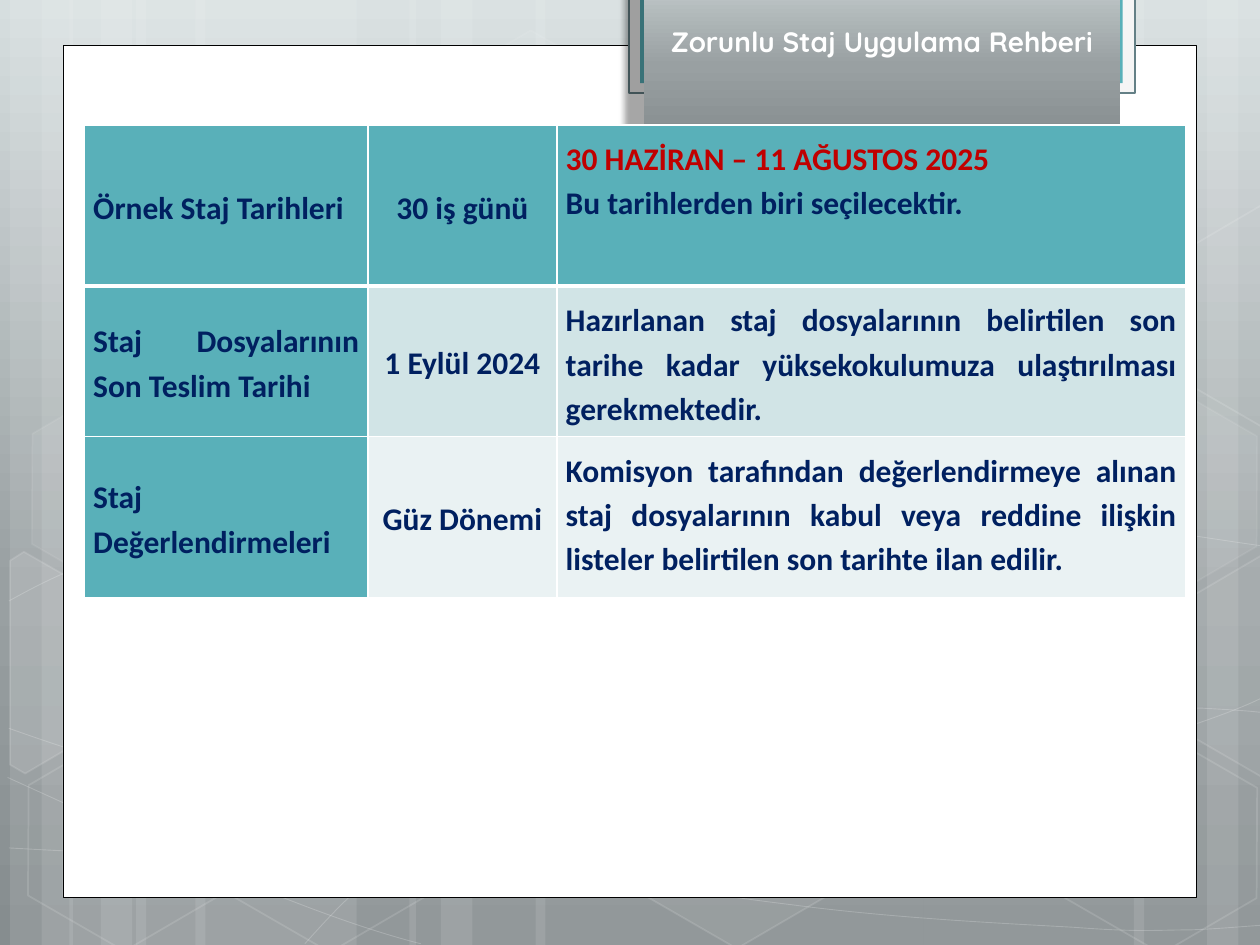
"""Build the internship guide slide with its date table."""
from dataclasses import dataclass
from typing import NamedTuple, Optional

from lxml import etree
from pptx import Presentation
from pptx.dml.color import RGBColor
from pptx.enum.shapes import MSO_SHAPE
from pptx.enum.text import MSO_ANCHOR, MSO_AUTO_SIZE, PP_ALIGN
from pptx.oxml.ns import qn
from pptx.util import Inches, Pt

RECTANGLE, HEXAGON = MSO_SHAPE.RECTANGLE, MSO_SHAPE.HEXAGON
LEFT, CENTER, JUSTIFY = PP_ALIGN.LEFT, PP_ALIGN.CENTER, PP_ALIGN.JUSTIFY
TOP, MIDDLE = MSO_ANCHOR.TOP, MSO_ANCHOR.MIDDLE
FIT_SHAPE = MSO_AUTO_SIZE.SHAPE_TO_FIT_TEXT


@dataclass(frozen=True)
class Theme:
    white: str = "FFFFFF"
    black: str = "000000"
    teal: str = "59B0B9"
    tab: str = "F5F5F5"
    tab_edge: str = "648086"
    navy: str = "002060"
    red: str = "C00000"
    row_fills: tuple = ("59B0B9", "D1E4E6", "EAF2F3")
    gradient: tuple = ((0, "D6DEDF"), (62, "99A0A2"), (100, "868D8F"))
    title_font: str = "Quicksand"
    body_font: str = "Calibri"
    title_size: int = 16
    body_size: int = 18


class Paint(NamedTuple):
    fill: Optional[str] = None
    fill_alpha: int = 100
    line: Optional[str] = None
    line_width: float = 1
    line_alpha: int = 100


class Hexagon(NamedTuple):
    left: float
    top: float
    fill_alpha: int
    line_alpha: int


class Outline(NamedTuple):
    points: tuple
    fill_alpha: int = 0


class Entry(NamedTuple):
    lines: tuple
    align: PP_ALIGN
    first_color: str


THEME = Theme()
BANDS = ((1.08, 1.75), (0.08, 0.5), (0.33, 0.83), (1.55, 1.75), (0.55, 0.5), (0.8, 0.83),
         (7.33, 1.75), (9.58, 0.5), (9, 0.83), (4.25, 3.08), (3.25, 0.5), (3.5, 0.83))
CURVES = (
    ((0.07, 6.73), (0.61, 6.76), (1.15, 6.79), (1.9, 6.78), (2.65, 6.77), (3.58, 6.75), (4.58, 6.65),
     (5.58, 6.55), (7, 6.36), (7.92, 6.17), (8.83, 5.98), (9.77, 5.68), (10.07, 5.51)),
    ((0.07, 4.77), (0.36, 4.61), (0.65, 4.46), (1.21, 4.31), (1.78, 4.16), (2.59, 3.94), (3.47, 3.87),
     (4.36, 3.8), (5.44, 3.79), (6.54, 3.87), (7.64, 3.95), (9.47, 4.26), (10.07, 4.34)),
    ((0.06, 6.17), (1.27, 6.72), (2.47, 7.27), (3.34, 7.49)),
    ((0.07, 5.78), (0.38, 5.89), (0.7, 6), (1.28, 6.16), (1.86, 6.31), (2.73, 6.56), (3.57, 6.73),
     (4.4, 6.9), (5.45, 7.08), (6.28, 7.18), (7.11, 7.29), (8, 7.33), (8.53, 7.36),
     (9.05, 7.4), (9.19, 7.38), (9.45, 7.38), (9.71, 7.37), (9.89, 7.35), (10.07, 7.34)),
    ((2.42, 7.49), (2.6, 7.29), (2.78, 7.09), (3.02, 6.91), (3.26, 6.73), (3.6, 6.53), (3.88, 6.39),
     (4.16, 6.25), (4.33, 6.19), (4.7, 6.09), (5.06, 5.99), (5.73, 5.85), (6.08, 5.78),
     (6.44, 5.71), (6.49, 5.71), (6.8, 5.69), (7.11, 5.66), (7.6, 5.63), (7.94, 5.62),
     (8.29, 5.61), (8.86, 5.62), (8.86, 5.62), (8.86, 5.62), (9.53, 5.62), (9.53, 5.62),
     (9.71, 5.63), (9.88, 5.64), (9.97, 5.65), (10.06, 5.66), (10.03, 5.65), (10.06, 5.66)),
)
HEXAGONS = (
    Hexagon(3.34, 0.36, 4, 8), Hexagon(4.97, 5.89, 6, 12), Hexagon(0.11, 5.91, 0, 12),
    Hexagon(0.14, 3.12, 7, 8), Hexagon(1.74, 5.92, 0, 12), Hexagon(7.53, 4.53, 10, 12),
    Hexagon(8.34, 5.93, 0, 12), Hexagon(8.34, 3.14, 7, 8),
)
CUT_HEXAGONS = (
    Outline(((0.08, 4.45), (0.19, 4.38), (0.96, 4.82), (0.95, 5.7), (0.2, 6.14), (0.08, 6.07)), 10),
    Outline(((9.26, 4.85), (10.01, 4.41), (10.09, 4.46), (10.09, 6.13), (10.02, 6.17), (9.26, 5.73)), 4),
    Outline(((9.26, 2.07), (10.01, 1.63), (10.1, 1.68), (10.09, 3.35), (10.02, 3.39), (9.26, 2.95))),
)
PANELS = (
    ((0.5, 0.36, 9, 6.76), Paint(THEME.white, line=THEME.black, line_width=0.5)),
    ((4.99, -0.02, 4.02, 0.76), Paint(THEME.tab, line=THEME.tab_edge, line_width=1.25)),
    ((5.08, -0.02, 3.83, 0.68), Paint(THEME.teal)),
)
COLUMN_WIDTHS = (2.25, 1.5, 4.99)
ROW_HEIGHTS = (1.28, 0.93, 1.28)
ROWS = (
    (Entry(("Örnek Staj Tarihleri",), LEFT, THEME.navy),
     Entry(("30 iş günü",), CENTER, THEME.navy),
     Entry(("30 HAZİRAN – 11 AĞUSTOS 2025", "Bu tarihlerden biri seçilecektir."), JUSTIFY, THEME.red)),
    (Entry(("Staj Dosyalarının Son Teslim Tarihi",), JUSTIFY, THEME.navy),
     Entry(("1 Eylül 2024",), CENTER, THEME.navy),
     Entry(("Hazırlanan staj dosyalarının belirtilen son tarihe kadar yüksekokulumuza "
            "ulaştırılması gerekmektedir.",), JUSTIFY, THEME.navy)),
    (Entry(("Staj Değerlendirmeleri",), JUSTIFY, THEME.navy),
     Entry(("Güz Dönemi",), CENTER, THEME.navy),
     Entry(("Komisyon tarafından değerlendirmeye alınan staj dosyalarının kabul veya reddine "
            "ilişkin listeler belirtilen son tarihte ilan edilir.",), JUSTIFY, THEME.navy)),
)


def add_node(parent, tag: str, **attributes):
    node = etree.SubElement(parent, qn(tag))
    for name, value in attributes.items():
        node.set(name, str(value))
    return node


def paint_solid(fill, color: str, alpha: int, owner) -> None:
    fill.solid()
    fill.fore_color.rgb = RGBColor.from_string(color)
    if alpha < 100:
        add_node(owner.find(qn("a:solidFill"))[0], "a:alpha", val=alpha * 1000)


def paint_shape(shape, paint: Paint) -> None:
    shape.shadow.inherit = False
    properties = shape.element.spPr
    if paint.fill and paint.fill_alpha:
        paint_solid(shape.fill, paint.fill, paint.fill_alpha, properties)
    else:
        shape.fill.background()
    if paint.line:
        shape.line.width = Pt(paint.line_width)
        paint_solid(shape.line.fill, paint.line, paint.line_alpha, properties.find(qn("a:ln")))
    else:
        shape.line.fill.background()


def paint_gradient(fill, owner) -> None:
    fill.gradient()
    gradient = next(owner.iter(qn("a:gradFill")))
    for child in list(gradient):
        gradient.remove(child)
    stops = add_node(gradient, "a:gsLst")
    for position, color in THEME.gradient:
        add_node(add_node(stops, "a:gs", pos=position * 1000), "a:srgbClr", val=color)
    add_node(gradient, "a:lin", ang=90 * 60000, scaled=0)


def draw_preset(slide, kind: MSO_SHAPE, box: tuple, paint: Paint):
    shape = slide.shapes.add_shape(kind, *map(Inches, box))
    paint_shape(shape, paint)
    return shape


def draw_outline(slide, points: tuple, closed: bool, paint: Paint):
    start, *others = [(Inches(x), Inches(y)) for x, y in points]
    builder = slide.shapes.build_freeform(*start)
    builder.add_line_segments(others, close=closed)
    shape = builder.convert_to_shape()
    paint_shape(shape, paint)
    return shape


def draw_curve(slide, points: tuple) -> None:
    shape = draw_outline(slide, points, False, Paint(line=THEME.white, line_width=0.5, line_alpha=20))
    outline = next(shape.element.iter(qn("a:path")))
    segments = outline.findall(qn("a:lnTo"))
    for first in range(0, len(segments), 3):
        curve = add_node(outline, "a:cubicBezTo")
        for segment in segments[first:first + 3]:
            curve.append(segment[0])
            outline.remove(segment)


def draw_backdrop(slide) -> None:
    paint_gradient(slide.background.fill, slide.element)
    for left, width in BANDS:
        draw_preset(slide, RECTANGLE, (left, 0, width, 7.5), Paint(THEME.white, 10))
    for points in CURVES:
        draw_curve(slide, points)
    for item in HEXAGONS:
        paint = Paint(THEME.white, item.fill_alpha, THEME.white, 1, item.line_alpha)
        shape = draw_preset(slide, HEXAGON, (item.left, item.top, 1.75, 1.52), paint)
        shape.adjustments[0] = 0.285
        shape.rotation = 30
    for item in CUT_HEXAGONS:
        draw_outline(slide, item.points, True, Paint(THEME.white, item.fill_alpha, THEME.white, 1, 12))
    for box, paint in PANELS:
        draw_preset(slide, RECTANGLE, box, paint)


def format_run(run, font: str, size: int, color: str) -> None:
    run.font.name, run.font.size, run.font.bold = font, Pt(size), True
    run.font.color.rgb = RGBColor.from_string(color)


def draw_title(slide, text: str) -> None:
    title = slide.shapes.title
    title.element.getparent().append(title.element)
    title.left, title.top, title.width, title.height = map(Inches, (5.11, 0.14, 3.78, 0.37))
    properties = title.element.spPr
    paint_gradient(title.fill, properties)
    shadow = add_node(add_node(properties, "a:effectLst"), "a:outerShdw", blurRad=Pt(3.5), dist=Pt(4),
                      dir=90 * 60000, sx=97000, rotWithShape=0)
    add_node(add_node(shadow, "a:srgbClr", val=THEME.black), "a:alpha", val=34000)
    title.text_frame.text = text
    title.text_frame.auto_size = FIT_SHAPE
    paragraph = title.text_frame.paragraphs[0]
    paragraph.alignment = CENTER
    format_run(paragraph.runs[0], THEME.title_font, THEME.title_size, THEME.white)


def draw_borders(cell, row: int) -> None:
    properties = cell._tc.get_or_add_tcPr()
    widths = {"a:lnL": 1, "a:lnR": 1, "a:lnT": 3 if row == 1 else 1, "a:lnB": 3 if row == 0 else 1}
    for index, (tag, width) in enumerate(widths.items()):
        border = add_node(properties, tag, w=Pt(width))
        add_node(add_node(border, "a:solidFill"), "a:srgbClr", val=THEME.white)
        properties.insert(index, border)


def fill_cell(cell, entry: Entry, row: int, column: int) -> None:
    is_detail = column == 2
    cell.fill.solid()
    cell.fill.fore_color.rgb = RGBColor.from_string(THEME.row_fills[row if column else 0])
    cell.margin_left = cell.margin_right = Inches(0.07)
    cell.margin_top = cell.margin_bottom = Inches(0.08 if is_detail else 0)
    cell.vertical_anchor = TOP if is_detail else MIDDLE
    cell.text_frame.text = "\n".join(entry.lines)
    for index, paragraph in enumerate(cell.text_frame.paragraphs):
        paragraph.alignment, paragraph.line_spacing = entry.align, 1.15
        color = THEME.navy if index else entry.first_color
        format_run(paragraph.runs[0], THEME.body_font, THEME.body_size, color)
    draw_borders(cell, row)


def draw_table(slide) -> None:
    frame = slide.shapes.add_table(len(ROWS), len(COLUMN_WIDTHS), *map(Inches, (0.67, 0.99, 8.74, 3.74)))
    for column, width in zip(frame.table.columns, COLUMN_WIDTHS):
        column.width = Inches(width)
    for row, height in zip(frame.table.rows, ROW_HEIGHTS):
        row.height = Inches(height)
    frame.height = Inches(3.74)
    for row, entries in enumerate(ROWS):
        for column, entry in enumerate(entries):
            fill_cell(frame.table.cell(row, column), entry, row, column)


def main() -> None:
    presentation = Presentation()
    presentation.slide_width, presentation.slide_height = Inches(10), Inches(7.5)
    slide = presentation.slides.add_slide(presentation.slide_layouts[5])
    draw_backdrop(slide)
    draw_title(slide, "Zorunlu Staj Uygulama Rehberi")
    draw_table(slide)
    presentation.save("out.pptx")


if __name__ == "__main__":
    main()
